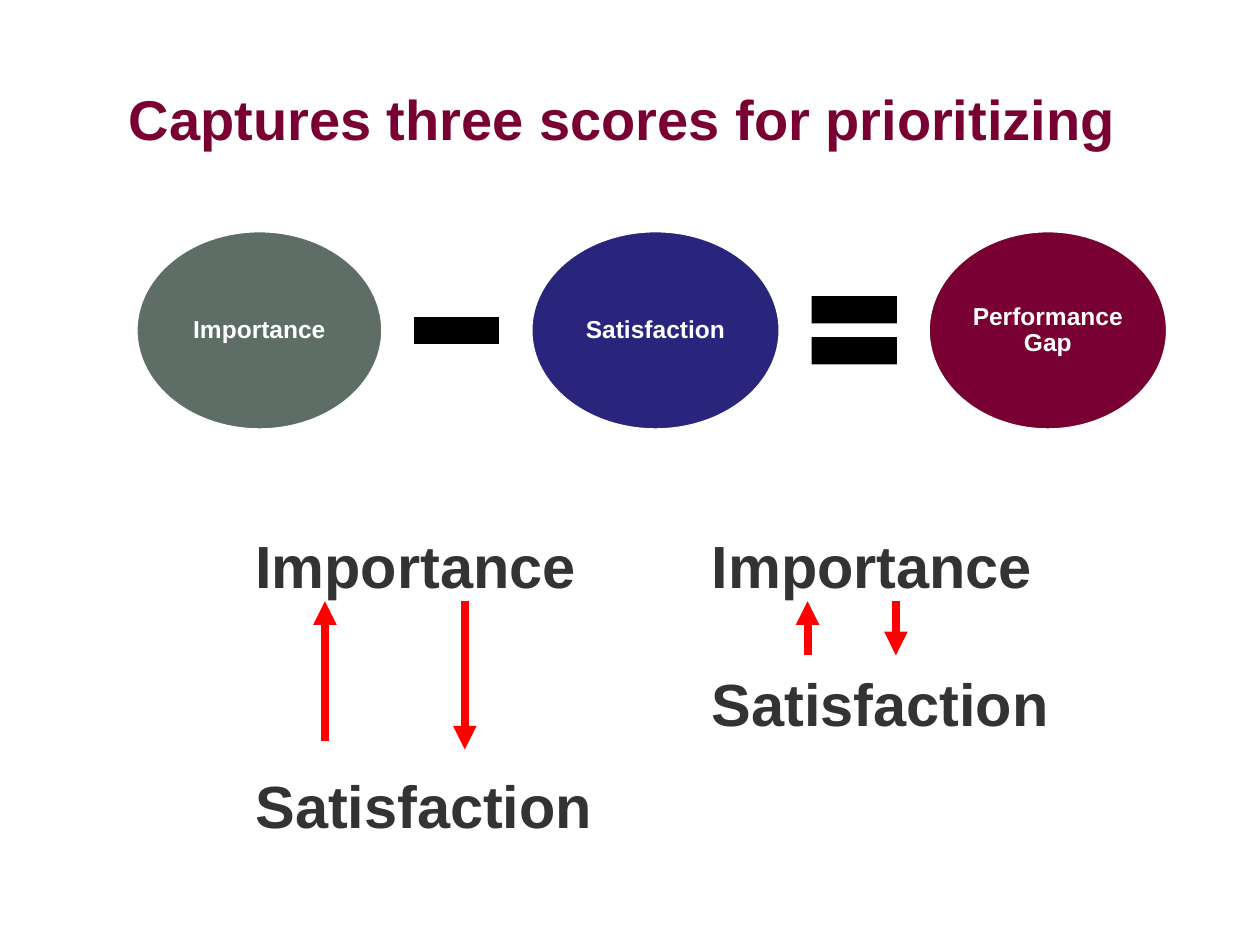
from lxml.etree import SubElement
from pptx import Presentation
from pptx.dml.color import RGBColor
from pptx.enum.shapes import MSO_CONNECTOR, MSO_SHAPE
from pptx.enum.text import MSO_ANCHOR, PP_ALIGN
from pptx.oxml.ns import qn
from pptx.util import Cm, Pt

MAROON = RGBColor(0x78, 0x00, 0x32)
GREY_GREEN = RGBColor(0x5E, 0x6E, 0x66)
NAVY = RGBColor(0x29, 0x25, 0x7D)
BLACK = RGBColor(0x00, 0x00, 0x00)
WHITE = RGBColor(0xFF, 0xFF, 0xFF)
CHARCOAL = RGBColor(0x33, 0x33, 0x33)
RED = RGBColor(0xFF, 0x00, 0x00)

TEXT_BOX_FORMAT = {"word_wrap": True, "margin_top": Cm(0.23)}
CIRCLE_TEXT_FORMAT = {
    "word_wrap": True,
    "vertical_anchor": MSO_ANCHOR.MIDDLE,
    "margin_left": Cm(0.05),
    "margin_right": Cm(0.05),
    "margin_top": Cm(0.05),
    "margin_bottom": Cm(0.05),
}


def apply_format(target, values):
    for name, value in values.items():
        setattr(target, name, value)


def write_text(shape, text, frame_format, size, color, paragraph_format):
    apply_format(shape.text_frame, frame_format)
    paragraph = shape.text_frame.paragraphs[0]
    paragraph.text = text
    apply_format(paragraph, paragraph_format)
    apply_format(paragraph.font, {"name": "Arial", "size": Pt(size), "bold": True})
    paragraph.font.color.rgb = color


def add_text(slide, box, text, size, color, alignment=PP_ALIGN.LEFT):
    shape = slide.shapes.add_textbox(*map(Cm, box))
    write_text(shape, text, TEXT_BOX_FORMAT, size, color, {"alignment": alignment})


def add_filled_shape(slide, kind, box, color):
    shape = slide.shapes.add_shape(kind, *map(Cm, box))
    shape.shadow.inherit = False
    shape.fill.solid()
    shape.fill.fore_color.rgb = color
    shape.line.fill.background()
    return shape


def add_circle(slide, box, text, color):
    circle = add_filled_shape(slide, MSO_SHAPE.OVAL, box, color)
    circle.line.color.rgb = WHITE
    circle.line.width = Pt(2)
    write_text(circle, text, CIRCLE_TEXT_FORMAT, 14, WHITE,
               {"alignment": PP_ALIGN.CENTER, "line_spacing": 0.9})


def add_arrow(slide, x, start_y, end_y):
    arrow = slide.shapes.add_connector(
        MSO_CONNECTOR.STRAIGHT, Cm(x), Cm(start_y), Cm(x), Cm(end_y))
    arrow.line.color.rgb = RED
    arrow.line.width = Pt(4.5)
    SubElement(arrow.line._get_or_add_ln(), qn("a:tailEnd"), type="triangle")
    SubElement(arrow._element.spPr, qn("a:effectLst"))


def add_equation(slide, left, top, height):
    gap, operator_size = 0.32, 2.34
    operator_top = top + (height - operator_size) / 2
    terms = [
        ("Importance", 4.98, GREY_GREEN, MSO_SHAPE.MATH_MINUS),
        ("Satisfaction", 5.03, NAVY, MSO_SHAPE.MATH_EQUAL),
        ("Performance Gap", 4.83, MAROON, None),
    ]
    for text, width, color, operator in terms:
        add_circle(slide, (left, top, width, height), text, color)
        left += width + gap
        if operator is not None:
            box = (left, operator_top, operator_size, operator_size)
            add_filled_shape(slide, operator, box, BLACK)
            left += operator_size + gap


def add_comparison(slide, left, top, width, drop, up_arrow, down_arrow):
    label_height, arrow_top = 1.6, 1.68
    for text, offset in (("Importance", 0), ("Satisfaction", drop)):
        box = (left, top + offset, width, label_height)
        add_text(slide, box, text, 34, CHARCOAL)
    up_x, up_start = up_arrow
    down_x, down_end = down_arrow
    add_arrow(slide, left + up_x, top + up_start, top + arrow_top)
    add_arrow(slide, left + down_x, top + arrow_top, top + down_end)


def main():
    presentation = Presentation()
    apply_format(presentation, {"slide_width": Cm(25.4), "slide_height": Cm(19.05)})
    slide = presentation.slides.add_slide(presentation.slide_layouts[6])
    add_text(slide, (1.12, 1.47, 22.86, 2.16),
             "Captures three scores for prioritizing", 32, MAROON, PP_ALIGN.CENTER)
    add_equation(slide, 2.74, 4.65, 4.02)
    add_comparison(slide, 4.9, 10.44, 9.2, 4.83, (1.65, 4.5), (4.47, 4.67))
    add_comparison(slide, 14.1, 10.44, 8, 2.77, (2.18, 2.77), (3.96, 2.77))
    presentation.save("out.pptx")


if __name__ == "__main__":
    main()
